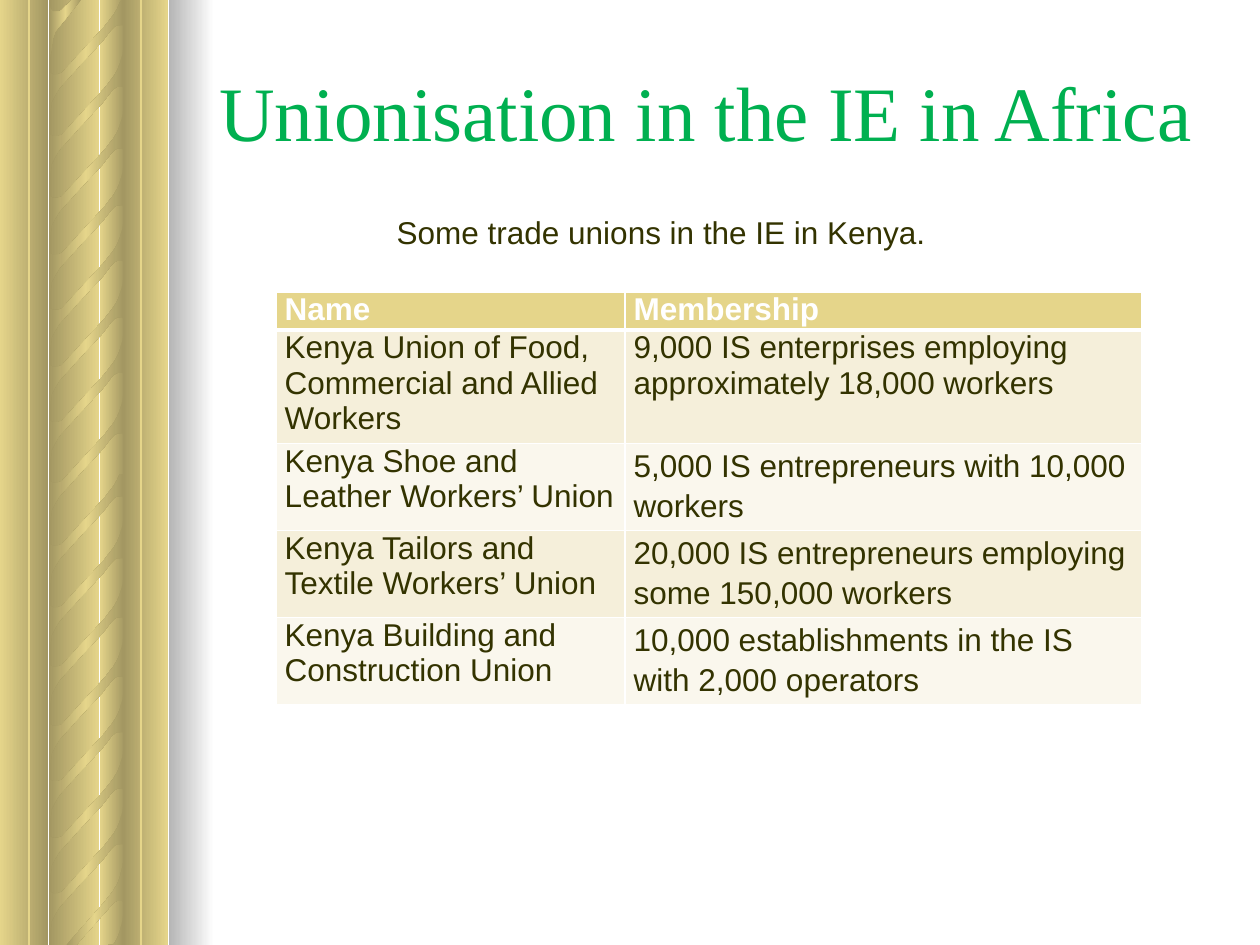
from typing import NamedTuple

from lxml.etree import SubElement
from pptx import Presentation
from pptx.dml.color import RGBColor as Rgb
from pptx.enum.shapes import MSO_CONNECTOR as Conn, MSO_SHAPE as Shp
from pptx.enum.text import MSO_ANCHOR as Anchor, MSO_AUTO_SIZE as AutoSize
from pptx.oxml.ns import qn
from pptx.util import Inches, Pt

COLORS = {
    "gold": "E5D58A", "white": "FFFFFF", "title": "00B050",
    "text": "333300", "band": "F5EFDA", "pale": "FAF7ED",
}
SHADE = "46000"


class Stop(NamedTuple):
    pos: int
    color: str
    shaded: bool = False


class Band(NamedTuple):
    left: float
    width: float
    stops: tuple[Stop, ...]


class Row(NamedTuple):
    name: str
    membership: str
    height: float
    fill: str
    spacing: float = 1.0


LIGHT_DARK = (Stop(0, "gold"), Stop(100, "gold", True))
DARK_LIGHT = (Stop(0, "gold", True), Stop(100, "gold"))
ROPE = (Stop(0, "gold", True), Stop(50, "gold"), Stop(100, "gold", True))
SHADOW = (Stop(0, "white", True), Stop(100, "white"))

BANDS = [
    Band(0.79, 0.2, LIGHT_DARK), Band(0, 0.38, LIGHT_DARK),
    Band(0.39, 0.4, DARK_LIGHT), Band(0.98, 0.35, DARK_LIGHT),
]
STRAND = [
    (0.98, 0.09), (0.98, 0.33), (0.97, 0.32), (0.93, 0.32), (0.91, 0.33),
    (0.88, 0.36), (0.81, 0.45), (0.64, 0.63), (0.47, 0.82), (0.44, 0.87),
    (0.41, 0.93), (0.4, 1.01), (0.39, 1.12), (0.39, 0.63), (0.39, 0.68),
    (0.4, 0.7), (0.42, 0.71), (0.44, 0.71), (0.46, 0.71), (0.49, 0.7),
    (0.83, 0.33), (0.9, 0.24), (0.93, 0.19), (0.95, 0.14), (0.97, 0.07),
    (0.98, 0), (0.98, 0.2),
]
LOWER_TOPS = [4.58, 5.05, 5.49, 5.94, 6.38, 4.11, 3.62]
UPPER_TOPS = [0.86, 1.31, 1.75, 2.2, 2.64, 0.37, -0.12, 3.12]
LOWER_END = [
    (0.98, 6.92), (0.98, 7.16), (0.97, 7.15), (0.93, 7.15), (0.91, 7.16),
    (0.88, 7.19), (0.8, 7.28), (0.64, 7.46), (0.6, 7.51), (0.52, 7.51),
    (0.83, 7.16), (0.9, 7.07), (0.93, 7.02), (0.95, 6.97), (0.97, 6.89),
    (0.98, 6.83), (0.98, 7.03),
]
BOTTOM_TIP = [
    (0.98, 7.34), (0.98, 7.5), (0.38, 7.51), (0.9, 7.5), (0.93, 7.45),
    (0.95, 7.4), (0.97, 7.32), (0.98, 7.25), (0.98, 7.46),
]
TOP_TIP = [
    (0.65, -0.01), (0.48, 0.2), (0.44, 0.25), (0.42, 0.31), (0.41, 0.39),
    (0.39, 0.5), (0.39, 0.01), (0.4, 0.06), (0.41, 0.08), (0.42, 0.09),
    (0.44, 0.09), (0.47, 0.09), (0.49, 0.08), (0.58, -0.01),
]
ROWS = [
    Row("Name", "Membership", 0.28, "gold"),
    Row("Kenya Union of Food, Commercial and Allied Workers",
        "9,000 IS enterprises employing approximately 18,000 workers", 0.67, "band"),
    Row("Kenya Shoe and Leather Workers’ Union",
        "5,000 IS entrepreneurs with 10,000 workers", 0.69, "pale", 1.15),
    Row("Kenya Tailors and Textile Workers’ Union",
        "20,000 IS entrepreneurs employing some 150,000 workers", 0.53, "band", 1.15),
    Row("Kenya Building and Construction Union",
        "10,000 establishments in the IS with 2,000 operators", 0.57, "pale", 1.15),
]


def rgb(name: str) -> Rgb:
    return Rgb.from_string(COLORS[name])


def add_color(parent, stop: Stop) -> None:
    color = SubElement(parent, qn("a:srgbClr"), val=COLORS[stop.color])
    if stop.shaded:
        SubElement(color, qn("a:shade"), val=SHADE)


def paint(s, stops: tuple[Stop, ...]) -> None:
    s.shadow.inherit = False
    s.line.fill.background()
    s.fill.gradient()
    s.fill.gradient_angle = 0
    stop_list = s._element.spPr.find(".//" + qn("a:gsLst"))
    for old in list(stop_list):
        stop_list.remove(old)
    for stop in stops:
        add_color(SubElement(stop_list, qn("a:gs"), pos=str(stop.pos * 1000)), stop)


def add_band(slide, band: Band, top: float, height: float) -> None:
    s = slide.shapes.add_shape(Shp.RECTANGLE, Inches(band.left), Inches(top),
                               Inches(band.width), Inches(height))
    paint(s, band.stops)


def add_strand(slide, points: list[tuple[float, float]]) -> None:
    start, *rest = [(Inches(x), Inches(y)) for x, y in points]
    builder = slide.shapes.build_freeform(*start)
    builder.add_line_segments(rest, close=True)
    paint(builder.convert_to_shape(), ROPE)


def add_half(slide, top: float, strand_tops: list[float]) -> None:
    for band in BANDS:
        add_band(slide, band, top, 3.77)
    for y in strand_tops:
        add_strand(slide, [(x, max(y + dy, top)) for x, dy in STRAND])


def add_groove(slide, x: float) -> None:
    s = slide.shapes.add_connector(Conn.STRAIGHT, Inches(x), 0, Inches(x), Inches(7.5))
    s.line.color.rgb = rgb("gold")
    s.line.width = Pt(1)
    SubElement(s._element.spPr, qn("a:effectLst"))


def write(tf, text: str, *, size: int = 18, font: str = "Arial", color: str = "text",
          bold: bool = False, spacing: float = 1.0) -> None:
    p = tf.paragraphs[0]
    p.line_spacing = spacing
    r = p.add_run()
    r.text = text
    r.font.size = Pt(size)
    r.font.name = font
    r.font.bold = bold
    r.font.color.rgb = rgb(color)


def add_borders(cell, bottom: int) -> None:
    tc_pr = cell._tc.get_or_add_tcPr()
    for side, width in (("L", 1), ("R", 1), ("T", 1), ("B", bottom)):
        ln = SubElement(tc_pr, qn(f"a:ln{side}"), w=str(Pt(width)))
        add_color(SubElement(ln, qn("a:solidFill")), Stop(0, "white"))


def add_union_table(slide) -> None:
    frame = slide.shapes.add_table(len(ROWS), 2, Inches(2.19), Inches(2.32),
                                   Inches(6.86), Inches(3.27))
    table = frame.table
    for column, width in zip(table.columns, (2.77, 4.1)):
        column.width = Inches(width)
    for i, row in enumerate(ROWS):
        header = i == 0
        table.rows[i].height = Inches(row.height)
        for j, text in enumerate((row.name, row.membership)):
            cell = table.cell(i, j)
            cell.margin_left = cell.margin_right = Inches(0.07)
            cell.margin_top = cell.margin_bottom = 0
            add_borders(cell, 3 if header else 1)
            cell.fill.solid()
            cell.fill.fore_color.rgb = rgb(row.fill)
            write(cell.text_frame, text, bold=header, color="white" if header else "text",
                  spacing=row.spacing if j else 1.0)
    frame.height = Inches(3.27)


def add_text(slide, left: float, top: float, width: float, height: float):
    sp = slide.shapes.add_textbox(Inches(left), Inches(top), Inches(width), Inches(height))
    sp.text_frame.word_wrap = True
    return sp.text_frame


def main() -> None:
    prs = Presentation()
    prs.slide_width, prs.slide_height = Inches(10), Inches(7.5)
    slide = prs.slides.add_slide(prs.slide_layouts[6])

    add_half(slide, 3.73, LOWER_TOPS)
    add_strand(slide, LOWER_END)
    add_half(slide, -0.01, UPPER_TOPS)
    add_strand(slide, BOTTOM_TIP)
    add_strand(slide, TOP_TIP)
    add_band(slide, Band(1.34, 0.36, SHADOW), 0, 7.5)
    for x in (0.23, 1.12):
        add_groove(slide, x)

    tf = add_text(slide, 1.64, 0.25, 8.19, 1.25)
    tf.vertical_anchor = Anchor.MIDDLE
    write(tf, "Unionisation in the IE in Africa", size=44, font="Times New Roman", color="title")
    add_union_table(slide)
    tf = add_text(slide, 3.05, 1.64, 4.61, 0.4)
    tf.auto_size = AutoSize.SHAPE_TO_FIT_TEXT
    write(tf, "Some trade unions in the IE in Kenya.")

    prs.save("out.pptx")


if __name__ == "__main__":
    main()
